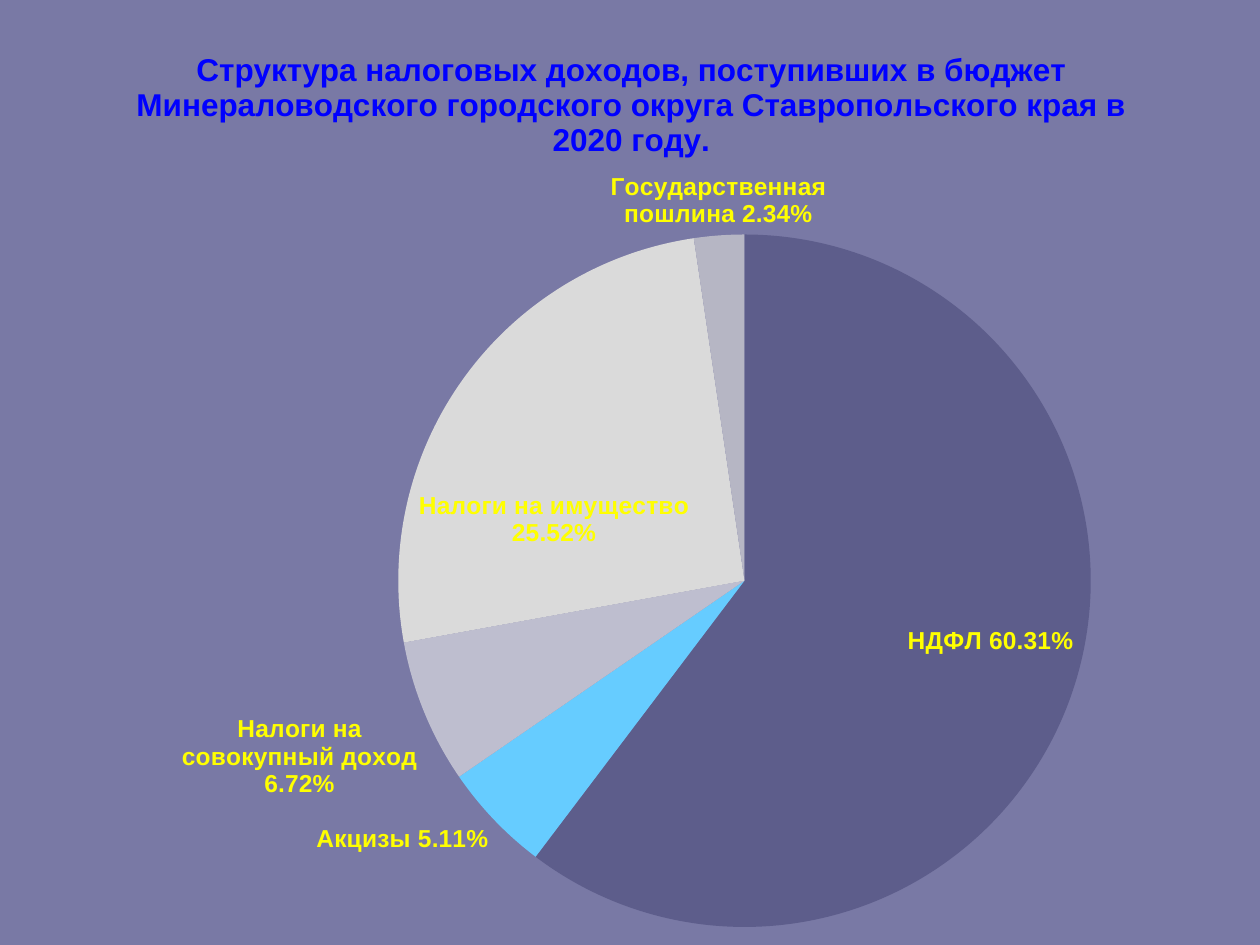
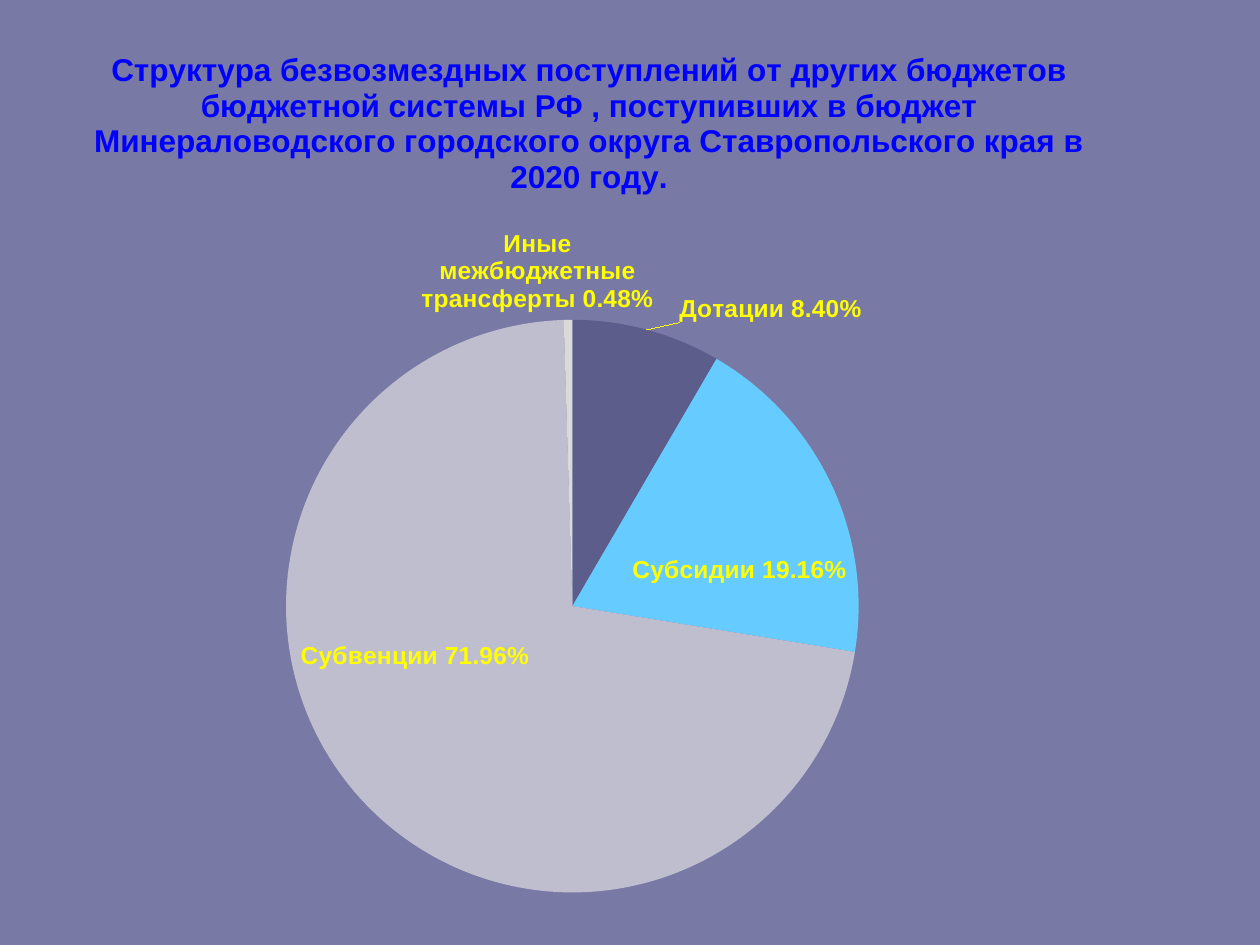
from dataclasses import dataclass

from lxml.etree import SubElement
from pptx import Presentation
from pptx.chart.data import CategoryChartData
from pptx.dml.color import RGBColor
from pptx.enum.chart import XL_CHART_TYPE, XL_LABEL_POSITION
from pptx.oxml import parse_xml
from pptx.oxml.ns import nsdecls, qn
from pptx.util import Pt

# Content: frames are left, top, width, height in points;
# title_at and pie_box are fractions of the chart frame
TAX_TITLE = (
    "Структура налоговых доходов, поступивших в бюджет Минераловодского "
    "городского округа Ставропольского края в 2020 году."
)
GRANT_TITLE = (
    "Структура безвозмездных поступлений от других бюджетов бюджетной системы РФ , "
    "поступивших в бюджет Минераловодского городского округа Ставропольского края "
    "в 2020 году."
)
PIES = [
    {
        "title": TAX_TITLE,
        "series": TAX_TITLE,
        "frame": (-5.76, 5.76, 731.52, 534.24),
        "title_at": (0.11, 0.035),
        "pie_box": (0.319, 0.24, 0.541, 0.741),
        "shares": {
            "НДФЛ": 0.6031,
            "Акцизы": 0.0511,
            "Налоги на совокупный доход": 0.0672,
            "Налоги на имущество": 0.2552,
            "Государственная пошлина": 0.0234,
        },
    },
    {
        "title": GRANT_TITLE,
        "series": "Series 1",
        "frame": (-5.76, 19.44, 731.52, 501.12),
        "title_at": (0.077, 0.011),
        "pie_box": (0.231, 0.326, 0.448, 0.653),
        "shares": {
            "Дотации": 0.084,
            "Субсидии": 0.1916,
            "Субвенции": 0.7196,
            "Иные межбюджетные трансферты": 0.0048,
        },
    },
]


@dataclass(frozen=True)
class Theme:
    font: str = "Arial"
    background: str = "7979A5"
    text: str = "FFFFFF"
    title: str = "0000FF"
    label: str = "FFFF00"
    slices: tuple = ("5D5D8B", "66CCFF", "BEBECF", "DADADA", "B6B6C4")
    text_size: int = 10
    title_size: int = 18
    label_size: int = 14


THEME = Theme()


def set_all(target, values):
    for name, value in values.items():
        setattr(target, name, value)


def style_font(font, size, color, bold):
    set_all(font, {"name": THEME.font, "size": Pt(size), "bold": bold})
    font.color.rgb = RGBColor.from_string(color)


def make_layout(values, inner=False):
    """Manual layout: x and y, then width and height where given."""
    layout = parse_xml(f"<c:layout {nsdecls('c')}><c:manualLayout/></c:layout>")
    settings = [("layoutTarget", "inner")] if inner else []
    settings += [("xMode", "edge"), ("yMode", "edge")]
    settings += zip("xywh", values)
    for tag, value in settings:
        SubElement(layout[0], qn(f"c:{tag}")).set("val", str(value))
    return layout


def clear_area():
    return parse_xml(
        f"<c:spPr {nsdecls('c', 'a')}><a:noFill/><a:ln><a:noFill/></a:ln></c:spPr>"
    )


def drop_layout(element):
    for layout in element.findall(qn("c:layout")):
        element.remove(layout)


def add_title(chart, text, position):
    chart.has_title = True
    title = chart.chart_title
    title.include_in_layout = False
    paragraph = title.text_frame.paragraphs[0]
    run = paragraph.add_run()
    run.text = text
    for font in (paragraph.font, run.font):
        style_font(font, THEME.title_size, THEME.title, True)
    element = title._element
    drop_layout(element)
    element.find(qn("c:tx")).addnext(make_layout(position))


def add_labels(series):
    labels = series.data_labels
    set_all(labels, {
        "show_value": True,
        "show_category_name": True,
        "show_percentage": False,
        "number_format": "0.00%",
        "number_format_is_linked": False,
        "position": XL_LABEL_POSITION.BEST_FIT,
    })
    style_font(labels.font, THEME.label_size, THEME.label, True)
    separator = parse_xml(f"<c:separator {nsdecls('c')}> </c:separator>")
    labels._element.find(qn("c:showBubbleSize")).addnext(separator)


def add_pie(slide, pie):
    data = CategoryChartData(number_format="0.00%")
    data.categories = list(pie["shares"])
    data.add_series(pie["series"], list(pie["shares"].values()))
    frame = [Pt(length) for length in pie["frame"]]
    chart = slide.shapes.add_chart(XL_CHART_TYPE.PIE, *frame, data).chart
    chart.has_legend = False
    style_font(chart.font, THEME.text_size, THEME.text, False)
    add_title(chart, pie["title"], pie["title_at"])

    # Slices and their labels
    plot = chart.plots[0]
    plot.vary_by_categories = True
    series = plot.series[0]
    for index, color in enumerate(THEME.slices[:len(pie["shares"])]):
        slice_format = series.points[index].format
        slice_format.fill.solid()
        slice_format.fill.fore_color.rgb = RGBColor.from_string(color)
        slice_format.line.fill.background()
    add_labels(series)

    # Transparent areas and the place of the pie
    chart_element = chart._chartSpace.find(qn("c:chart"))
    chart_element.addnext(clear_area())
    plot_area = chart_element.find(qn("c:plotArea"))
    drop_layout(plot_area)
    plot_area.insert(0, make_layout(pie["pie_box"], inner=True))
    plot_area.append(clear_area())


def main():
    presentation = Presentation()
    set_all(presentation, {"slide_width": Pt(720), "slide_height": Pt(540)})
    for pie in PIES:
        slide = presentation.slides.add_slide(presentation.slide_layouts[6])
        fill = slide.background.fill
        fill.solid()
        fill.fore_color.rgb = RGBColor.from_string(THEME.background)
        add_pie(slide, pie)
    presentation.save("out.pptx")


if __name__ == "__main__":
    main()
